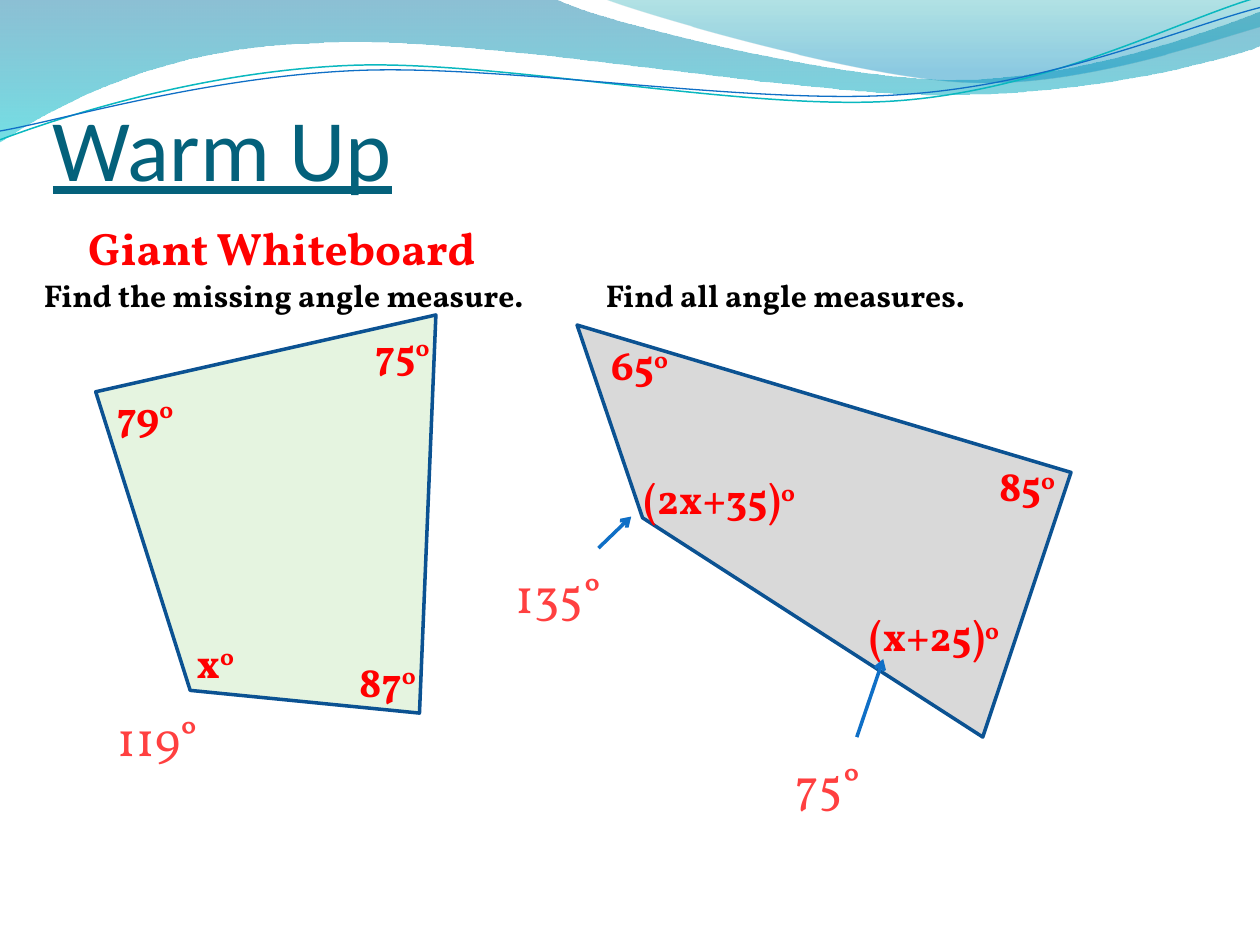
"""Build the Warm Up slide about the angles of quadrilaterals."""
from dataclasses import dataclass
from typing import Any, NamedTuple, Optional

from lxml.etree import SubElement
from pptx import Presentation
from pptx.dml.color import RGBColor as RGB
from pptx.enum.shapes import MSO_CONNECTOR as CONN
from pptx.enum.text import MSO_ANCHOR as ANCHOR, MSO_AUTO_SIZE as AUTO, PP_ALIGN as ALIGN
from pptx.oxml.ns import qn
from pptx.util import Inches, Pt

Point = tuple[float, float]


@dataclass(frozen=True)
class Theme:
    """Colours, fonts and type sizes of the slide."""
    title: str = "04617B"
    label: str = "FF0000"
    answer: str = "FF4040"
    text: str = "000000"
    outline: str = "0B5292"
    arrow: str = "0F6FC6"
    teal: str = "0AB8BF"
    green: str = "E5F4E0"
    grey: str = "D9D9D9"
    head_font: str = "Calibri"
    body_font: str = "Vollkorn"
    title_pt: int = 50
    body_pt: int = 26
    answer_pt: int = 28
    label_pt: int = 24
    task_pt: int = 18


T = Theme()
TITLE = {"name": T.head_font, "size": Pt(T.title_pt), "underline": True, "color": T.title}
HEADING = {"name": T.body_font, "size": Pt(T.body_pt), "bold": True, "color": T.label}
TASK = HEADING | {"size": Pt(T.task_pt), "color": T.text}
LABEL = HEADING | {"size": Pt(T.label_pt)}
ANSWER = {"name": T.body_font, "size": Pt(T.answer_pt), "color": T.answer}


class Stop(NamedTuple):
    """A gradient stop with its opacity in percent."""
    position: float
    color: str
    opacity: int


class Wave(NamedTuple):
    """An outline whose segments are line ends or cubic curves."""
    start: Point
    segments: list[tuple[float, ...]]
    stops: Optional[list[Stop]] = None
    line: Optional[str] = None
    weight: float = 0


class Polygon(NamedTuple):
    """A filled quadrilateral."""
    corners: list[Point]
    fill: str


class Note(NamedTuple):
    """A text box with an optional superscript."""
    text: str
    left: float
    top: float
    width: float
    height: float
    style: dict[str, Any]
    sup: str = ""


class Arrow(NamedTuple):
    """An arrow from an answer to its angle."""
    start: Point
    end: Point


WAVES = [
    Wave((0, 0), [(4.4, -0.01), (4.76, 0.17, 6.64, 0.63, 7.58, 0.63),
                  (8.53, 0.63, 9.58, 0.26, 10, 0.09), (10.01, 0.36),
                  (9.83, 0.44, 8.7, 0.76, 7.46, 0.75), (6.22, 0.75, 3.82, 0.28, 2.57, 0.34),
                  (1.29, 0.36, 0.46, 0.83, -0.01, 1.13), (0, 0)],
         [Stop(0, "0074A1", 45), Stop(1, "00C6CF", 55)]),
    Wave((4.79, -0.01), [(5.09, 0.11, 6.82, 0.62, 7.69, 0.65),
                         (8.56, 0.69, 9.61, 0.32, 10, 0.21), (10, 0), (4.79, -0.01)],
         [Stop(0, "00A1A9", 30), Stop(0.8, "008BBF", 45)]),
    Wave((0, 1.11), [(0.48, 0.93, 1.58, 0.57, 2.77, 0.52), (3.95, 0.47, 5.93, 0.89, 7.13, 0.8),
                     (8.33, 0.71, 9.38, 0.15, 9.98, -0.02)], line=T.teal, weight=0.85),
    Wave((0, 1.04), [(0.47, 0.96, 1.64, 0.61, 2.83, 0.56), (4.03, 0.51, 5.97, 0.84, 7.17, 0.75),
                     (8.36, 0.67, 9.41, 0.21, 10, 0.06)], line=T.arrow, weight=0.75),
]
POLYGONS = [
    Polygon([(1.51, 5.48), (0.76, 3.11), (3.46, 2.5), (3.33, 5.66), (1.51, 5.48)], T.green),
    Polygon([(4.58, 2.58), (5.1, 4.11), (7.8, 5.85), (8.5, 3.75), (4.58, 2.58)], T.grey),
]
CORNER_NOTES = [
    Note("x", 1.46, 5, 0.67, 0.5, LABEL, "o"),
    Note("87", 2.75, 5.15, 0.96, 0.5, LABEL, "o"),
    Note("75", 2.88, 2.55, 0.96, 0.5, LABEL, "o"),
    Note("79", 0.83, 3.04, 0.96, 0.5, LABEL, "o"),
]
NOTES = [
    Note("(2x+35)", 5.01, 3.7, 2.33, 0.5, LABEL, "o"),
    Note("(x+25)", 6.8, 4.79, 2.33, 0.5, LABEL, "o"),
    Note("85", 7.83, 3.6, 2.33, 0.5, LABEL, "o"),
    Note("65", 4.75, 2.64, 2.33, 0.5, LABEL, "o"),
    Note("Find the missing angle measure.", 0.25, 2.14, 4.17, 0.4, TASK),
    Note("Find all angle measures.", 4.71, 2.14, 4.17, 0.4, TASK),
    Note("119°", 0.83, 5.57, 2.05, 0.57, ANSWER),
]
ARROWS = [Arrow((4.75, 4.35), (5.01, 4.1)), Arrow((6.8, 5.85), (7.01, 5.23))]
ARROW_NOTES = [
    Note("135°", 3.99, 4.43, 2.05, 0.57, ANSWER),
    Note("75°", 6.21, 5.94, 2.05, 0.57, ANSWER),
]


def add_run(p: Any, text: str, style: dict[str, Any]) -> Any:
    """Add a run with the given font values."""
    r = p.add_run()
    r.text = text
    for name, value in style.items():
        if name == "color":
            r.font.color.rgb = RGB.from_string(value)
        else:
            setattr(r.font, name, value)
    return r


def set_line(sp: Any, color: str, weight: float) -> None:
    """Set the colour and weight of a line."""
    sp.line.color.rgb = RGB.from_string(color)
    sp.line.width = Pt(weight)


def add_outline(s: Any, start: Point, segments: list[tuple[float, ...]], close: bool) -> Any:
    """Draw a freeform, joining each three points of a curve into one cubic segment."""
    points = [(Inches(x), Inches(y)) for seg in segments for x, y in zip(seg[::2], seg[1::2])]
    builder = s.shapes.build_freeform(*map(Inches, start))
    builder.add_line_segments(points, close=close)
    sp = builder.convert_to_shape()
    sp.shadow.inherit = False
    steps = iter(list(sp._element.iter(qn("a:lnTo"))))
    for seg in segments:
        first, *others = [next(steps) for _ in seg[::2]]
        if others:
            curve = first.makeelement(qn("a:cubicBezTo"))
            first.addprevious(curve)
            for step in (first, *others):
                curve.append(step[0])
                step.getparent().remove(step)
    return sp


def add_wave(s: Any, wave: Wave) -> None:
    """Draw a gradient band or a thin curve."""
    sp = add_outline(s, wave.start, wave.segments, close=bool(wave.stops))
    if not wave.stops:
        sp.fill.background()
        set_line(sp, wave.line, wave.weight)
        return
    sp.line.fill.background()
    sp.fill.gradient()
    sp.fill.gradient_angle = 270
    for target, stop in zip(sp.fill.gradient_stops, wave.stops):
        target.position = stop.position
        target.color.rgb = RGB.from_string(stop.color)
    for clr, stop in zip(sp._element.spPr.iter(qn("a:srgbClr")), wave.stops):
        SubElement(clr, qn("a:alpha"), val=str(stop.opacity * 1000))


def add_polygon(s: Any, polygon: Polygon) -> None:
    """Draw a filled quadrilateral."""
    sp = add_outline(s, polygon.corners[0], polygon.corners[1:], close=True)
    sp.fill.solid()
    sp.fill.fore_color.rgb = RGB.from_string(polygon.fill)
    set_line(sp, T.outline, 2)


def add_note(s: Any, note: Note) -> None:
    """Add a text box, with its superscript if it has one."""
    tf = s.shapes.add_textbox(*map(Inches, note[1:5])).text_frame
    tf.word_wrap, tf.auto_size = True, AUTO.SHAPE_TO_FIT_TEXT
    p = tf.paragraphs[0]
    add_run(p, note.text, note.style)
    if note.sup:
        add_run(p, note.sup, note.style)._r.get_or_add_rPr().set("baseline", "30000")


def add_arrow(s: Any, arrow: Arrow) -> None:
    """Draw an open-headed arrow without a shadow."""
    sp = s.shapes.add_connector(CONN.STRAIGHT, *map(Inches, arrow.start + arrow.end))
    set_line(sp, T.arrow, 2)
    SubElement(sp.line._get_or_add_ln(), qn("a:tailEnd"), type="arrow")
    SubElement(sp._element.spPr, qn("a:effectLst"))


def fill_placeholder(s: Any, sp: Any, box: tuple[float, ...], text: str,
                     style: dict[str, Any], frame: dict[str, Any]) -> Any:
    """Place a placeholder on top, write its text and return the paragraph."""
    s.shapes._spTree.append(sp._element)
    sp.left, sp.top, sp.width, sp.height = map(Inches, box)
    for name, value in frame.items():
        setattr(sp.text_frame, name, value)
    p = sp.text_frame.paragraphs[0]
    p.alignment = ALIGN.LEFT
    add_run(p, text, style)
    return p


def main() -> None:
    """Build and save the slide."""
    prs = Presentation()
    prs.slide_width, prs.slide_height = Inches(10), Inches(7.5)
    s = prs.slides.add_slide(prs.slide_layouts[1])
    title, body = s.placeholders
    for wave in WAVES:
        add_wave(s, wave)
    fill_placeholder(s, title, (0.42, 0.33, 9, 1.25), "Warm Up", TITLE,
                     {"vertical_anchor": ANCHOR.BOTTOM, "auto_size": AUTO.NONE, "margin_left": 0,
                      "margin_right": 0, "margin_top": Inches(0.05), "margin_bottom": 0})
    for draw, items in ((add_polygon, POLYGONS[:1]), (add_note, CORNER_NOTES),
                        (add_polygon, POLYGONS[1:]), (add_note, NOTES),
                        (add_arrow, ARROWS), (add_note, ARROW_NOTES)):
        for item in items:
            draw(s, item)
    p = fill_placeholder(s, body, (0.48, 1.7, 9, 4.8), "Giant Whiteboard", HEADING,
                         {"vertical_anchor": ANCHOR.TOP, "auto_size": AUTO.NONE})
    pPr = p._p.get_or_add_pPr()
    pPr.set("marL", str(Inches(0.12)))
    pPr.set("indent", "0")
    SubElement(pPr, qn("a:buNone"))
    prs.save("out.pptx")


if __name__ == "__main__":
    main()
